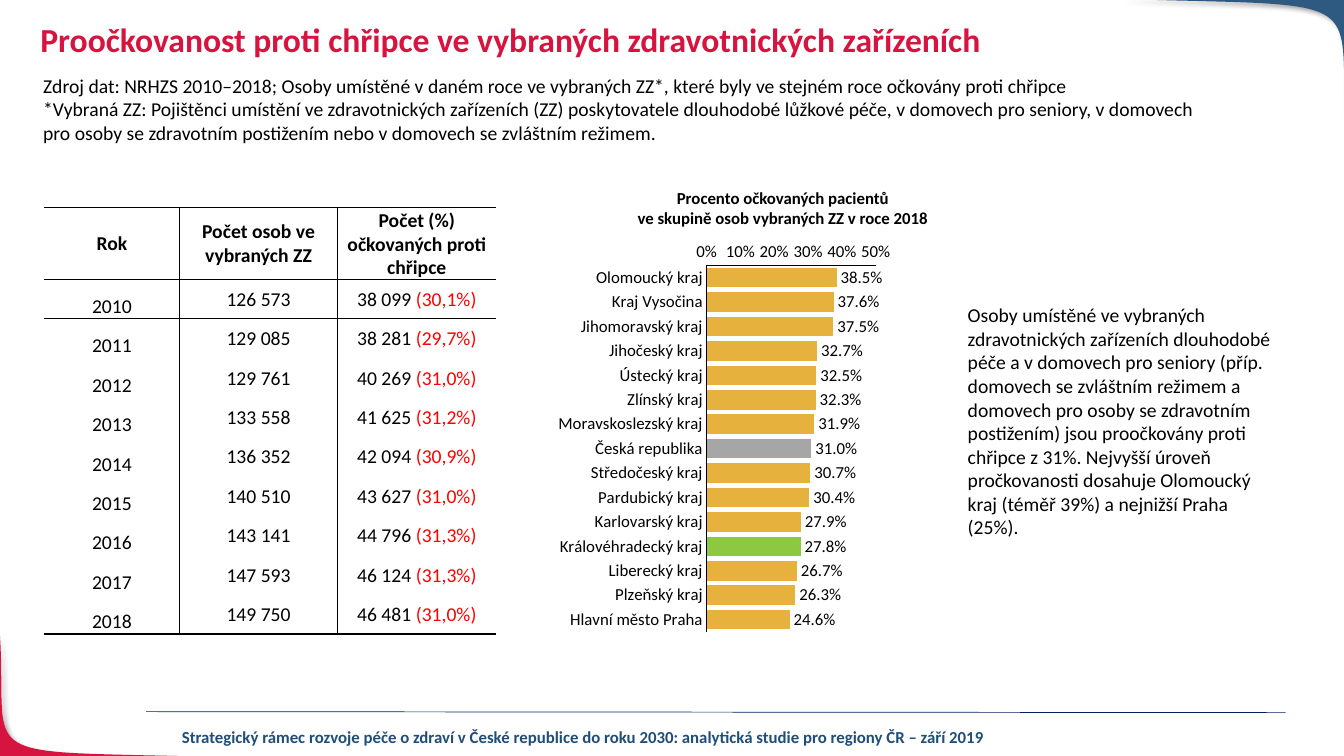
from dataclasses import dataclass

from lxml.etree import SubElement
from pptx import Presentation
from pptx.chart.data import CategoryChartData
from pptx.dml.color import RGBColor
from pptx.enum.chart import XL_CHART_TYPE, XL_LABEL_POSITION, XL_TICK_MARK
from pptx.enum.shapes import MSO_CONNECTOR
from pptx.enum.text import MSO_ANCHOR, MSO_AUTO_SIZE, PP_ALIGN
from pptx.oxml import parse_xml
from pptx.oxml.ns import nsdecls, qn
from pptx.util import Inches, Pt


@dataclass(frozen=True)
class Theme:
    font: str = "Calibri"
    title_size: int = 24
    body_size: int = 14
    small_size: int = 12
    black: str = "000000"
    crimson: str = "D71440"
    blue: str = "2E5980"
    navy: str = "002060"
    footer: str = "1F4E79"
    red: str = "FF0000"
    gold: str = "E7B13D"
    gray: str = "A6A6A6"
    green: str = "8CC841"


THEME = Theme()

YEARS = [
    ("2010", "126 573", "38 099", "30,1%"),
    ("2011", "129 085", "38 281", "29,7%"),
    ("2012", "129 761", "40 269", "31,0%"),
    ("2013", "133 558", "41 625", "31,2%"),
    ("2014", "136 352", "42 094", "30,9%"),
    ("2015", "140 510", "43 627", "31,0%"),
    ("2016", "143 141", "44 796", "31,3%"),
    ("2017", "147 593", "46 124", "31,3%"),
    ("2018", "149 750", "46 481", "31,0%"),
]

REGIONS = {
    "Olomoucký kraj": 0.385, "Kraj Vysočina": 0.376, "Jihomoravský kraj": 0.375,
    "Jihočeský kraj": 0.327, "Ústecký kraj": 0.325, "Zlínský kraj": 0.323,
    "Moravskoslezský kraj": 0.319, "Česká republika": 0.31, "Středočeský kraj": 0.307,
    "Pardubický kraj": 0.304, "Karlovarský kraj": 0.279, "Královéhradecký kraj": 0.278,
    "Liberecký kraj": 0.267, "Plzeňský kraj": 0.263, "Hlavní město Praha": 0.246,
}
HIGHLIGHTS = {"Česká republika": THEME.gray, "Královéhradecký kraj": THEME.green}


def style_font(font, size, color=THEME.black, bold=False):
    font.name, font.size, font.bold = THEME.font, Pt(size), bold
    font.color.rgb = RGBColor.from_string(color)


def write(frame, *paragraphs, size=THEME.body_size, color=THEME.black, bold=False,
          align=PP_ALIGN.LEFT, accent=THEME.red):
    """Each paragraph is a string, or a pair whose second part takes the accent colour."""
    frame.word_wrap = True
    for index, content in enumerate(paragraphs):
        para = frame.paragraphs[0] if index == 0 else frame.add_paragraph()
        para.alignment = align
        parts = (content,) if isinstance(content, str) else content
        for text, shade in zip(parts, (color, accent)):
            span = para.add_run()
            span.text = text
            style_font(span.font, size, shade, bold)


def add_text(page, box, *paragraphs, **style):
    shape = page.shapes.add_textbox(*map(Inches, box))
    write(shape.text_frame, *paragraphs, **style)


def add_title(page, box, text):
    title = page.shapes.title
    title.left, title.top, title.width, title.height = map(Inches, box)
    write(title.text_frame, text, size=THEME.title_size, color=THEME.crimson, bold=True)
    title.text_frame.auto_size = MSO_AUTO_SIZE.NONE
    title.text_frame.vertical_anchor = MSO_ANCHOR.TOP
    title.text_frame.paragraphs[0].line_spacing = 0.9


def add_corner(page, curve, corner, color):
    """Fill the area between a cubic curve and a corner of the slide."""
    steps = 40
    points = []
    for step in range(steps + 1):
        t = step / steps
        weights = ((1 - t) ** 3, 3 * t * (1 - t) ** 2, 3 * t * t * (1 - t), t ** 3)
        points.append(tuple(Inches(sum(w * point[axis] for w, point in zip(weights, curve)))
                            for axis in (0, 1)))
    builder = page.shapes.build_freeform(*points[0])
    builder.add_line_segments(points[1:] + [tuple(map(Inches, corner))], close=True)
    shape = builder.convert_to_shape()
    shape.fill.solid()
    shape.fill.fore_color.rgb = RGBColor.from_string(color)
    shape.line.fill.background()
    shape.shadow.inherit = False
    effects = shape._element.spPr.find(qn("a:effectLst"))
    shadow = SubElement(effects, qn("a:outerShdw"), blurRad=str(Pt(4)), dist=str(Pt(3)),
                        dir="2700000", algn="tl", rotWithShape="0")
    shade = SubElement(shadow, qn("a:srgbClr"), val=THEME.black)
    SubElement(shade, qn("a:alpha"), val="40000")


def add_frame(page):
    # Corner ornaments
    add_corner(page, [(2.13, 7.51), (-0.34, 7.44), (0.08, 7.59), (0, 6.3)],
               (-0.01, 7.51), THEME.crimson)
    add_corner(page, [(11.11, -0.01), (13.7, 0.07), (13.26, -0.1), (13.35, 1.42)],
               (13.35, -0.01), THEME.blue)
    # Footer rule and text
    rule = page.shapes.add_connector(MSO_CONNECTOR.STRAIGHT,
                                     *map(Inches, (1.45, 7.06, 12.75, 7.07)))
    rule.line.color.rgb = RGBColor.from_string(THEME.navy)
    rule.line.width = Pt(0.5)
    SubElement(rule._element.spPr, qn("a:effectLst"))
    add_text(page, (1.57, 7.16, 8.43, 0.3),
             "Strategický rámec rozvoje péče o zdraví v České republice do roku 2030: "
             "analytická studie pro regiony ČR – září 2019",
             size=THEME.small_size, color=THEME.footer, bold=True, align=PP_ALIGN.CENTER)


def set_borders(cell, sides):
    properties = cell._tc.get_or_add_tcPr()
    for side in "LRTB":
        line = SubElement(properties, qn(f"a:ln{side}"), w=str(Pt(1)))
        if side in sides:
            fill = SubElement(line, qn("a:solidFill"))
            SubElement(fill, qn("a:srgbClr"), val=THEME.black)
        else:
            SubElement(line, qn("a:noFill"))


def add_year_table(page, box):
    header = ("Rok", "Počet osob ve vybraných ZZ", "Počet (%) očkovaných proti chřipce")
    rows = [header] + [(year, people, (f"{count} ", f"({share})"))
                       for year, people, count, share in YEARS]
    table = page.shapes.add_table(len(rows), len(header), *map(Inches, box)).table
    table.first_row = table.horz_banding = False
    for column, width in zip(table.columns, (1.34, 1.57, 1.57)):
        column.width = Inches(width)
    header_height = 0.71
    for r, row in enumerate(rows):
        height = header_height if r == 0 else (box[3] - header_height) / len(YEARS)
        table.rows[r].height = Inches(height)
        for c, content in enumerate(row):
            cell = table.cell(r, c)
            cell.margin_left = cell.margin_right = cell.margin_top = Inches(0.01)
            cell.margin_bottom = 0
            is_year = r > 0 and c == 0
            cell.vertical_anchor = MSO_ANCHOR.BOTTOM if is_year else MSO_ANCHOR.MIDDLE
            write(cell.text_frame, content, bold=r == 0, align=PP_ALIGN.CENTER)
            sides = ("L" if c > 0 else "") + ("R" if c < 2 else "")
            sides += ("T" if r <= 2 else "") + ("B" if r in (0, 1, len(YEARS)) else "")
            set_borders(cell, sides)
            cell.fill.background()


def add_region_chart(page, box):
    data = CategoryChartData(number_format="0.0%")
    data.categories = list(REGIONS)
    data.add_series("Series 1", list(REGIONS.values()))
    chart = page.shapes.add_chart(XL_CHART_TYPE.BAR_CLUSTERED, *map(Inches, box), data).chart
    chart.has_legend = chart.has_title = False
    style_font(chart.font, THEME.small_size)

    # Axes
    for axis in (chart.category_axis, chart.value_axis):
        axis.has_major_gridlines = False
        axis.major_tick_mark = axis.minor_tick_mark = XL_TICK_MARK.NONE
        axis.format.line.color.rgb = RGBColor.from_string(THEME.black)
        axis.format.line.width = Pt(0.75)
        style_font(axis.tick_labels.font, THEME.small_size)
    chart.category_axis.reverse_order = True
    values = chart.value_axis
    values.minimum_scale, values.maximum_scale, values.major_unit = 0, 0.5, 0.1
    values.tick_labels.number_format = "0%"
    values.tick_labels.number_format_is_linked = False

    # Bars and labels
    plot = chart.plots[0]
    plot.gap_width, plot.vary_by_categories = 25, False
    bars = plot.series[0]
    bars.format.fill.solid()
    bars.format.fill.fore_color.rgb = RGBColor.from_string(THEME.gold)
    for index, region in enumerate(REGIONS):
        if region in HIGHLIGHTS:
            fill = bars.points[index].format.fill
            fill.solid()
            fill.fore_color.rgb = RGBColor.from_string(HIGHLIGHTS[region])
    labels = bars.data_labels
    labels.show_value, labels.position = True, XL_LABEL_POSITION.OUTSIDE_END
    labels.number_format, labels.number_format_is_linked = "0.0%", False
    style_font(labels.font, THEME.small_size)

    # Inner plot area as shares of the chart box
    area = chart._chartSpace.chart.plotArea
    for layout in area.findall(qn("c:layout")):
        area.remove(layout)
    shares = "".join(f'<c:{name} val="{share}"/>' for name, share in
                     (("x", 0.45), ("y", 0.08), ("w", 0.49), ("h", 0.9)))
    area.insert(0, parse_xml(
        f'<c:layout {nsdecls("c")}><c:manualLayout><c:layoutTarget val="inner"/>'
        f'<c:xMode val="edge"/><c:yMode val="edge"/>{shares}</c:manualLayout></c:layout>'))


def build_vaccination_page(deck):
    page = deck.slides.add_slide(deck.slide_layouts[5])
    add_frame(page)
    add_title(page, (0.3, 0.18, 11.5, 0.69),
              "Proočkovanost proti chřipce ve vybraných zdravotnických zařízeních")
    # Data source
    add_text(page, (0.33, 0.68, 11.71, 1.28),
             "Zdroj dat: NRHZS 2010–2018; Osoby umístěné v daném roce ve vybraných ZZ*, "
             "které byly ve stejném roce očkovány proti chřipce",
             "*Vybraná ZZ: Pojištěnci umístění ve zdravotnických zařízeních (ZZ) poskytovatele "
             "dlouhodobé lůžkové péče, v domovech pro seniory, v domovech pro osoby se "
             "zdravotním postižením nebo v domovech se zvláštním režimem.")
    add_year_table(page, (0.44, 2.06, 4.48, 4.23))
    # Chart with its heading
    add_region_chart(page, (5.47, 2.31, 3.42, 4.04))
    add_text(page, (5.9, 1.81, 3.73, 0.5), "Procento očkovaných pacientů",
             "ve skupině osob vybraných ZZ v roce 2018",
             size=THEME.small_size, bold=True, align=PP_ALIGN.CENTER)
    # Commentary
    add_text(page, (9.5, 2.96, 3.3, 2.92),
             "Osoby umístěné ve vybraných zdravotnických zařízeních dlouhodobé péče a v domovech "
             "pro seniory (příp. domovech se zvláštním režimem a domovech pro osoby se zdravotním "
             "postižením) jsou proočkovány proti chřipce z 31%. Nejvyšší úroveň pročkovanosti "
             "dosahuje Olomoucký kraj (téměř 39%) a nejnižší Praha (25%).")


def main():
    deck = Presentation()
    deck.slide_width, deck.slide_height = Inches(13.33), Inches(7.5)
    build_vaccination_page(deck)
    deck.save("out.pptx")


if __name__ == "__main__":
    main()
